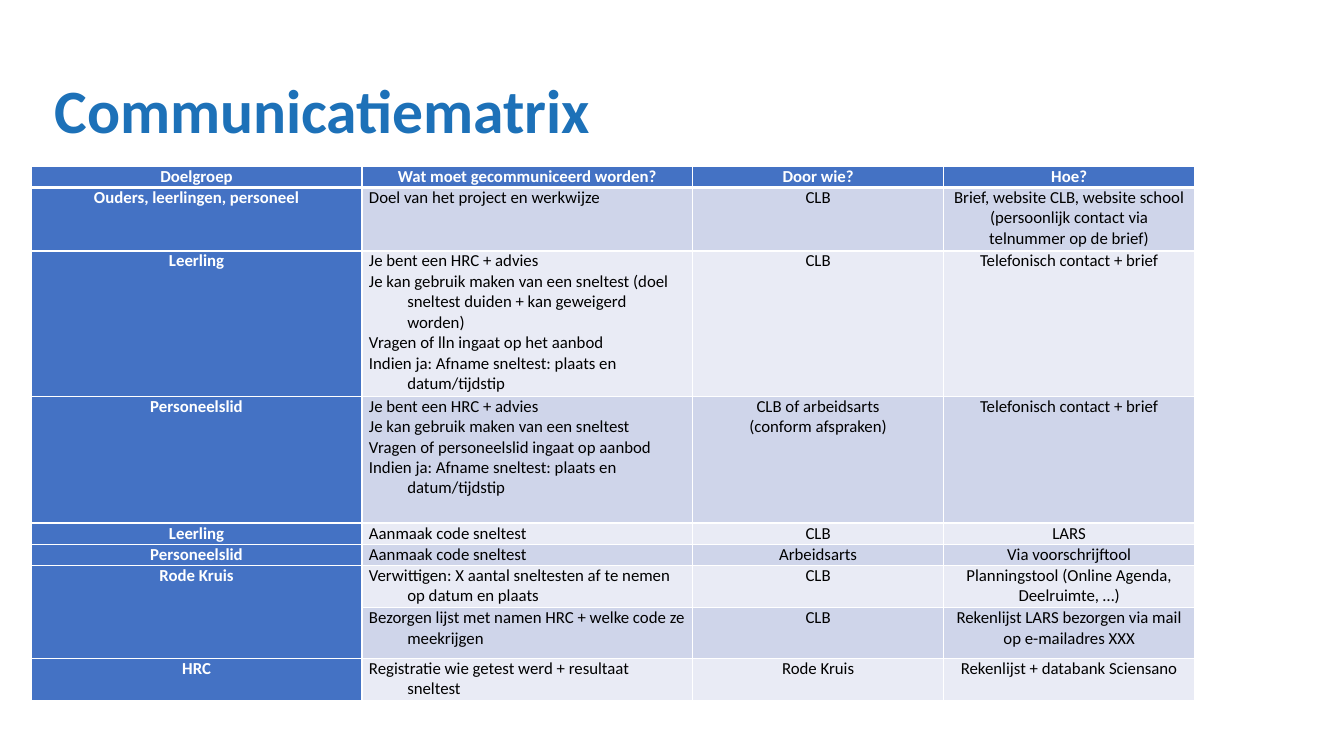
from dataclasses import dataclass

from lxml.etree import SubElement
from pptx import Presentation
from pptx.dml.color import RGBColor
from pptx.enum.text import MSO_ANCHOR, PP_ALIGN
from pptx.oxml.ns import qn
from pptx.util import Inches, Pt


@dataclass(frozen=True)
class Theme:
    font: str = "Calibri"
    title_size: int = 44
    table_size: int = 12
    title_color: str = "1D71B8"
    accent: str = "4472C4"
    dark_band: str = "CFD5EA"
    light_band: str = "E9EBF5"
    text: str = "000000"
    white: str = "FFFFFF"
    thin_border: int = 1
    thick_border: int = 3


HEADER = ("Doelgroep", "Wat moet gecommuniceerd worden?", "Door wie?", "Hoe?")
MESSAGES = [
    ("Ouders, leerlingen, personeel", "Doel van het project en werkwijze", "CLB",
     "Brief, website CLB, website school (persoonlijk contact via telnummer op de brief)"),
    ("Leerling",
     "Je bent een HRC + advies\n"
     "Je kan gebruik maken van een sneltest (doel sneltest duiden + kan geweigerd worden)\n"
     "Vragen of lln ingaat op het aanbod\n"
     "Indien ja: Afname sneltest: plaats en datum/tijdstip",
     "CLB", "Telefonisch contact + brief"),
    ("Personeelslid",
     "Je bent een HRC + advies\n"
     "Je kan gebruik maken van een sneltest\n"
     "Vragen of personeelslid ingaat op aanbod\n"
     "Indien ja: Afname sneltest: plaats en datum/tijdstip",
     "CLB of arbeidsarts\n(conform afspraken)", "Telefonisch contact + brief"),
    ("Leerling", "Aanmaak code sneltest", "CLB", "LARS"),
    ("Personeelslid", "Aanmaak code sneltest", "Arbeidsarts", "Via voorschrijftool"),
    ("Rode Kruis", "Verwittigen: X aantal sneltesten af te nemen op datum en plaats",
     "CLB", "Planningstool (Online Agenda, Deelruimte, …)"),
    (None, "Bezorgen lijst met namen HRC + welke code ze meekrijgen",
     "CLB", "Rekenlijst LARS bezorgen via mail op e-mailadres XXX"),
    ("HRC", "Registratie wie getest werd + resultaat sneltest",
     "Rode Kruis", "Rekenlijst + databank Sciensano"),
]
COLUMN_WIDTHS = (3.28, 3.28, 2.49, 2.49)
ROW_HEIGHTS = (0.21, 0.63, 1.44, 1.26, 0.21, 0.21, 0.42, 0.5, 0.42)


class SlideBuilder:
    def __init__(self, slide, theme):
        self.slide = slide
        self.theme = theme

    def add_run(self, paragraph, text, size, color, bold):
        run = paragraph.add_run()
        run.text = text
        run.font.name = self.theme.font
        run.font.size = Pt(size)
        run.font.bold = bold
        run.font.color.rgb = RGBColor.from_string(color)

    def add_title(self, text, left, top, width, height):
        title = self.slide.shapes.title
        title.left, title.top = Inches(left), Inches(top)
        title.width, title.height = Inches(width), Inches(height)
        title.text_frame.vertical_anchor = MSO_ANCHOR.MIDDLE
        paragraph = title.text_frame.paragraphs[0]
        paragraph.alignment = PP_ALIGN.LEFT
        paragraph.line_spacing = 0.9
        self.add_run(paragraph, text, self.theme.title_size, self.theme.title_color, True)

    def add_matrix(self, rows, left, top, column_widths, row_heights):
        frame = self.slide.shapes.add_table(
            len(rows), len(column_widths), Inches(left), Inches(top),
            Inches(sum(column_widths)), Inches(sum(row_heights)))
        table = frame.table
        table.first_col = True
        for column, width in zip(table.columns, column_widths):
            column.width = Inches(width)
        for row, height in zip(table.rows, row_heights):
            row.height = Inches(height)
        for row_index, texts in enumerate(rows):
            for column_index, text in enumerate(texts):
                cell = table.cell(row_index, column_index)
                self.style_cell(cell, row_index, column_index)
                if text is None:
                    table.cell(row_index - 1, column_index).merge(cell)
                else:
                    self.fill_cell(cell, text, row_index, column_index)

    def style_cell(self, cell, row_index, column_index):
        theme = self.theme
        cell.margin_left = cell.margin_right = Inches(0.07)
        cell.margin_top = cell.margin_bottom = 0
        properties = cell._tc.get_or_add_tcPr()
        for side in ("L", "R", "T", "B"):
            under_header = (row_index, side) in ((0, "B"), (1, "T"))
            width = theme.thick_border if under_header else theme.thin_border
            line = SubElement(properties, qn(f"a:ln{side}"), w=str(Pt(width)))
            fill = SubElement(line, qn("a:solidFill"))
            SubElement(fill, qn("a:srgbClr"), val=theme.white)
        band = theme.dark_band if row_index % 2 else theme.light_band
        is_heading = row_index == 0 or column_index == 0
        cell.fill.solid()
        cell.fill.fore_color.rgb = RGBColor.from_string(theme.accent if is_heading else band)

    def fill_cell(self, cell, text, row_index, column_index):
        theme = self.theme
        is_heading = row_index == 0 or column_index == 0
        for index, line in enumerate(text.split("\n")):
            frame = cell.text_frame
            paragraph = frame.add_paragraph() if index else frame.paragraphs[0]
            if column_index == 1 and not is_heading:
                paragraph.alignment = PP_ALIGN.LEFT
                properties = paragraph._p.get_or_add_pPr()
                properties.set("marL", str(Inches(0.38)))
                properties.set("indent", str(Inches(-0.38)))
            else:
                paragraph.alignment = PP_ALIGN.CENTER
            self.add_run(paragraph, line, theme.table_size,
                         theme.white if is_heading else theme.text, is_heading)


def main():
    presentation = Presentation()
    presentation.slide_width = Inches(13.33)
    presentation.slide_height = Inches(7.5)
    slide = presentation.slides.add_slide(presentation.slide_layouts[5])
    builder = SlideBuilder(slide, Theme())
    builder.add_title("Communicatiematrix", 0.44, 0.4, 12.38, 1.45)
    builder.add_matrix([HEADER, *MESSAGES], 0.31, 1.65, COLUMN_WIDTHS, ROW_HEIGHTS)
    presentation.save("out.pptx")


if __name__ == "__main__":
    main()
